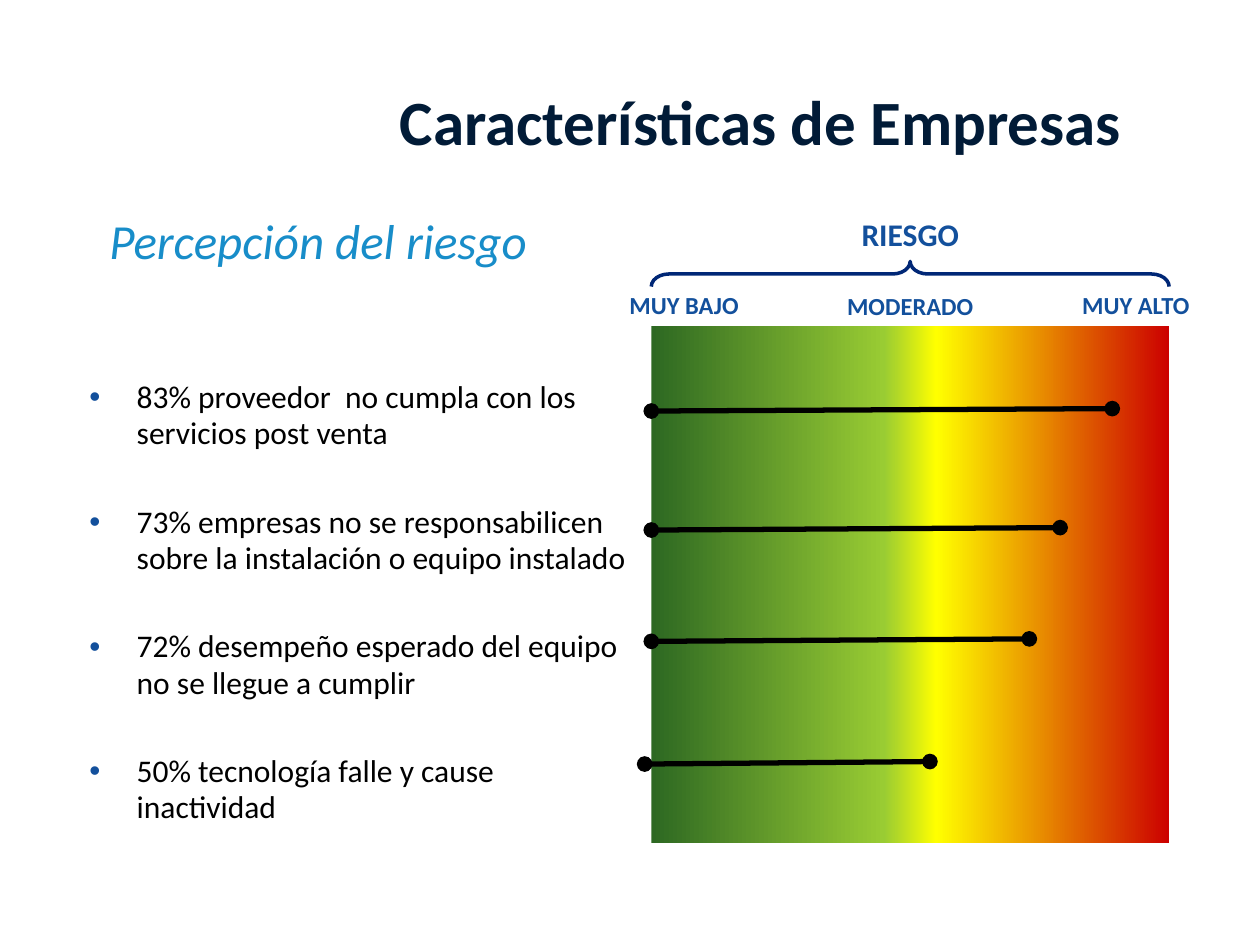
"""Build the slide on how companies perceive risk."""
from lxml import etree
from pptx import Presentation
from pptx.dml.color import RGBColor
from pptx.enum import shapes, text
from pptx.oxml import ns
from pptx.util import Pt

COLORS = {"title": "011B37", "subtitle": "188DC9", "label": "13509C",
          "body": "000000", "brace": "002776", "line": "000000"}
RISK_SCALE = [(0, "2D6822"), (45, "99CC33"), (55, "FFFF00"), (100, "CC0000")]
PERCEPTIONS = [
    "83% proveedor  no cumpla con los servicios post venta",
    "73% empresas no se responsabilicen sobre la instalación o equipo instalado",
    "72% desempeño esperado del equipo no se llegue a cumplir",
    "50% tecnología falle y cause inactividad",
]
LABELS = [
    ("MUY BAJO", (349.9, 162, 82, 24.5), 14),
    ("MODERADO", (476.6, 162.4, 87.1, 24.5), 14),
    ("MUY ALTO", (605.5, 162, 87.1, 24.5), 14),
    ("RIESGO", (476.6, 119.5, 87.1, 28.8), 18),
]
RISK_LINES = [(372.2, 234.9, 635.6), (372.2, 302.9, 605.8),
              (372.2, 366.5, 588.2), (368.4, 436.6, 531.4)]
LINE_RISE = 1.4


def add_xml(parent, tag, **attributes):
    return etree.SubElement(parent, ns.qn(tag), attributes)


def place(part, box):
    for name, value in zip(("left", "top", "width", "height"), box):
        setattr(part, name, Pt(value))


def format_font(font, color, size, **styles):
    for name, value in {"name": "Calibri", "size": Pt(size), **styles}.items():
        setattr(font, name, value)
    font.color.rgb = RGBColor.from_string(COLORS[color])


def write_line(part, wording, align, color, size, wrap=True, **styles):
    frame = part.text_frame
    frame.text = wording
    settings = {"word_wrap": wrap, "auto_size": text.MSO_AUTO_SIZE.NONE,
                "vertical_anchor": text.MSO_ANCHOR.MIDDLE}
    for name, value in settings.items():
        setattr(frame, name, value)
    frame.paragraphs[0].alignment = align
    format_font(frame.paragraphs[0].runs[0].font, color, size, **styles)


def add_label(slide, wording, box, align, color, size, **styles):
    label = slide.shapes.add_textbox(*map(Pt, box))
    write_line(label, wording, align, color, size, **styles)


def fill_perceptions(body):
    place(body, (43.9, 213.1, 321.9, 257.8))
    frame = body.text_frame
    frame.auto_size = text.MSO_AUTO_SIZE.NONE
    for index, perception in enumerate(PERCEPTIONS):
        item = frame.add_paragraph() if index else frame.paragraphs[0]
        item.text = perception
        item.line_spacing = 0.96
        item.space_before = Pt(29.8 if index else 0)
        properties = item._p.get_or_add_pPr()
        properties.set("marL", str(Pt(27)))
        properties.set("indent", str(Pt(-27)))
        bullet_color = add_xml(properties, "a:buClr")
        add_xml(bullet_color, "a:srgbClr", val=COLORS["label"])
        add_xml(properties, "a:buFont", typeface="Arial")
        add_xml(properties, "a:buChar", char="•")
        format_font(item.runs[0].font, "body", 18)


def add_risk_scale(slide):
    scale = slide.shapes.add_shape(
        shapes.MSO_SHAPE.RECTANGLE, *map(Pt, (372.2, 186.5, 295.9, 295.2)))
    scale.shadow.inherit = False
    scale.line.fill.background()
    scale.fill.gradient()
    scale.fill.gradient_angle = 0
    stops = scale._element.spPr.find(".//" + ns.qn("a:gsLst"))
    for stop in list(stops):
        stops.remove(stop)
    for percent, color in RISK_SCALE:
        stop = add_xml(stops, "a:gs", pos=str(percent * 1000))
        add_xml(stop, "a:srgbClr", val=color)


def add_brace(slide):
    brace = slide.shapes.add_shape(
        shapes.MSO_SHAPE.RIGHT_BRACE, *map(Pt, (512.9, 8.6, 14.4, 295.9)))
    brace.rotation = 270
    brace.adjustments[0] = 0.7
    brace.adjustments[1] = 0.5
    brace.shadow.inherit = False
    brace.fill.background()
    brace.line.color.rgb = RGBColor.from_string(COLORS["brace"])
    brace.line.width = Pt(2)


def add_risk_line(slide, start, height, end):
    risk_line = slide.shapes.add_connector(
        shapes.MSO_CONNECTOR.STRAIGHT,
        *map(Pt, (start, height, end, height - LINE_RISE)))
    risk_line.line.color.rgb = RGBColor.from_string(COLORS["line"])
    risk_line.line.width = Pt(3)
    outline = risk_line.line._get_or_add_ln()
    for tag in ("a:headEnd", "a:tailEnd"):
        add_xml(outline, tag, type="oval")
    add_xml(risk_line._element.spPr, "a:effectLst")


def main():
    presentation = Presentation()
    presentation.slide_width, presentation.slide_height = Pt(720), Pt(540)
    slide = presentation.slides.add_slide(presentation.slide_layouts[1])
    title, body = slide.placeholders
    place(title, (80.6, 43.2, 567.4, 51.1))
    write_line(title, "Características de Empresas", text.PP_ALIGN.RIGHT,
               "title", 36, bold=True)
    fill_perceptions(body)
    add_label(slide, "Percepción del riesgo", (55.4, 120.2, 278.6, 33.8),
              text.PP_ALIGN.LEFT, "subtitle", 28, italic=True)
    add_risk_scale(slide)
    for wording, box, size in LABELS:
        add_label(slide, wording, box, text.PP_ALIGN.CENTER, "label", size,
                  wrap=False, bold=True)
    add_brace(slide)
    for start, height, end in RISK_LINES:
        add_risk_line(slide, start, height, end)
    presentation.save("out.pptx")


if __name__ == "__main__":
    main()
